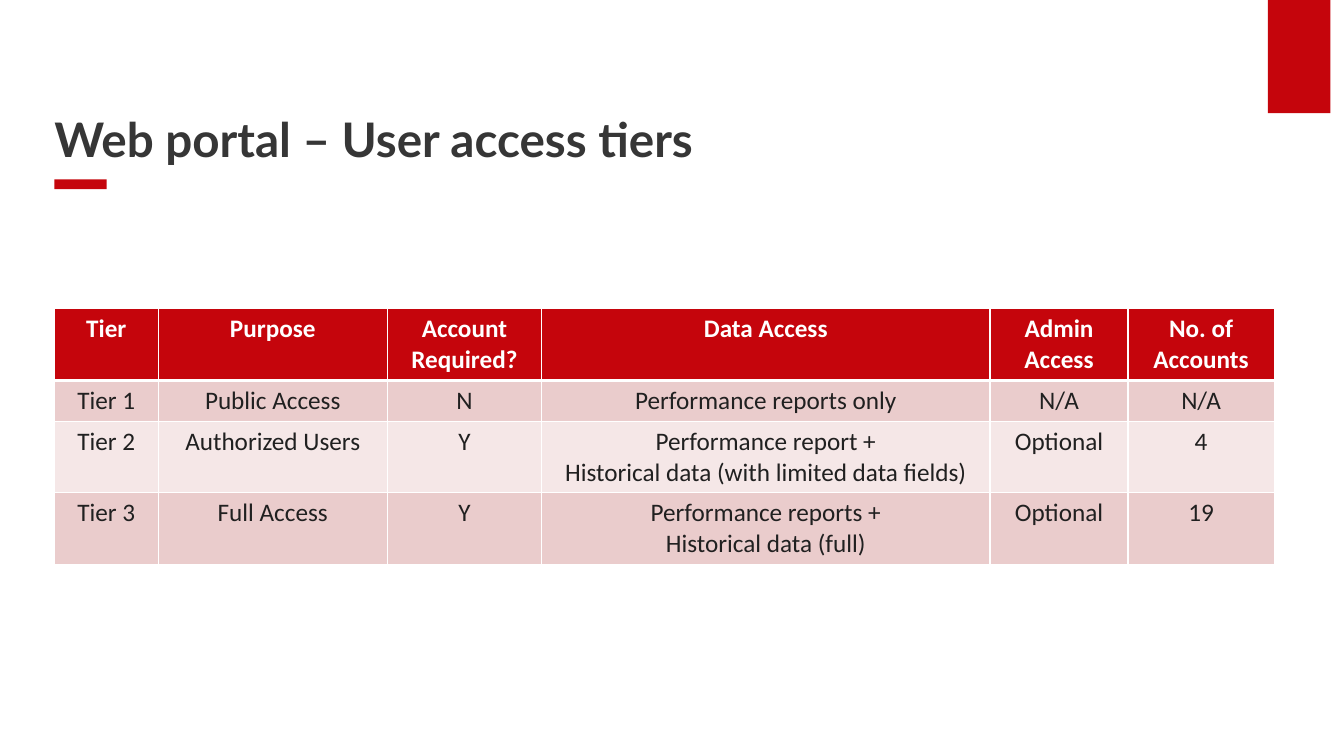
from lxml import etree
from pptx import Presentation
from pptx.dml.color import RGBColor
from pptx.enum import shapes, text
from pptx.oxml import ns
from pptx.util import Cm, Pt

RED = RGBColor(0xC5, 0x05, 0x0C)
WHITE = RGBColor(0xFF, 0xFF, 0xFF)
GREY = RGBColor(0x36, 0x36, 0x36)
INK = RGBColor(0x20, 0x20, 0x20)
PINK = RGBColor(0xEA, 0xCC, 0xCC)
PALE = RGBColor(0xF5, 0xE7, 0xE7)

LEFT = 1.37
WIDTHS = [2.62, 5.77, 3.89, 11.3, 3.48, 3.68]
HEIGHTS = [1.8, 1.03, 1.8, 1.8]
TIERS = [
    ["Tier", "Purpose", "Account Required?", "Data Access",
     "Admin Access", "No. of Accounts"],
    ["Tier 1", "Public Access", "N", "Performance reports only",
     "N/A", "N/A"],
    ["Tier 2", "Authorized Users", "Y",
     "Performance report +\nHistorical data (with limited data fields)",
     "Optional", "4"],
    ["Tier 3", "Full Access", "Y",
     "Performance reports +\nHistorical data (full)", "Optional", "19"],
]


def style(para, face, size, color, bold):
    for run in para.runs:
        font = run.font
        font.name = face
        font.size = Pt(size)
        font.bold = bold
        font.color.rgb = color


def add_bar(slide, x, y, w, h):
    bar = slide.shapes.add_shape(
        shapes.MSO_SHAPE.RECTANGLE, Cm(x), Cm(y), Cm(w), Cm(h))
    bar.shadow.inherit = False
    bar.fill.solid()
    bar.fill.fore_color.rgb = RED
    bar.line.fill.background()


def set_title(slide, words):
    title = slide.shapes.title
    title.left, title.top = Cm(LEFT), Cm(1.27)
    title.width, title.height = Cm(29.64), Cm(2.97)
    frame = title.text_frame
    frame.text = words
    frame.word_wrap = True
    frame.auto_size = text.MSO_AUTO_SIZE.NONE
    frame.vertical_anchor = text.MSO_ANCHOR.BOTTOM
    frame.margin_left = frame.margin_bottom = 0
    frame.margin_top, frame.margin_right = Cm(0.13), Cm(0.25)
    para = frame.paragraphs[0]
    para.alignment = text.PP_ALIGN.LEFT
    para.line_spacing = 0.9
    style(para, "Lato", 34, GREY, True)


def set_edges(cell, top, bottom):
    props = cell._tc.get_or_add_tcPr()
    for side, width in zip("LRTB", (1, 1, top, bottom)):
        edge = etree.SubElement(props, ns.qn("a:ln" + side), w=str(Pt(width)))
        fill = etree.SubElement(edge, ns.qn("a:solidFill"))
        etree.SubElement(fill, ns.qn("a:srgbClr"), val=str(WHITE))


def fill_cell(cell, words, row):
    head = row == 0
    set_edges(cell, 3 if row == 1 else 1, 3 if head else 1)
    cell.fill.solid()
    cell.fill.fore_color.rgb = RED if head else PINK if row % 2 else PALE
    cell.text_frame.text = words
    for para in cell.text_frame.paragraphs:
        para.alignment = text.PP_ALIGN.CENTER
        style(para, "Calibri", 18, WHITE if head else INK, head)


def add_grid(slide, x, y):
    table = slide.shapes.add_table(
        len(TIERS), len(WIDTHS), Cm(x), Cm(y),
        Cm(sum(WIDTHS)), Cm(sum(HEIGHTS))).table
    for col, width in zip(table.columns, WIDTHS):
        col.width = Cm(width)
    for line, height in zip(table.rows, HEIGHTS):
        line.height = Cm(height)
    for row, tier in enumerate(TIERS):
        for col, words in enumerate(tier):
            fill_cell(table.cell(row, col), words, row)


def main():
    deck = Presentation()
    deck.slide_width, deck.slide_height = Cm(33.87), Cm(19.05)
    slide = deck.slides.add_slide(deck.slide_layouts[5])
    add_bar(slide, 31.95, 0, 1.58, 2.85)
    add_bar(slide, LEFT, 4.52, 1.32, 0.25)
    set_title(slide, "Web portal – User access tiers")
    add_grid(slide, LEFT, 7.78)
    deck.save("out.pptx")


if __name__ == "__main__":
    main()
